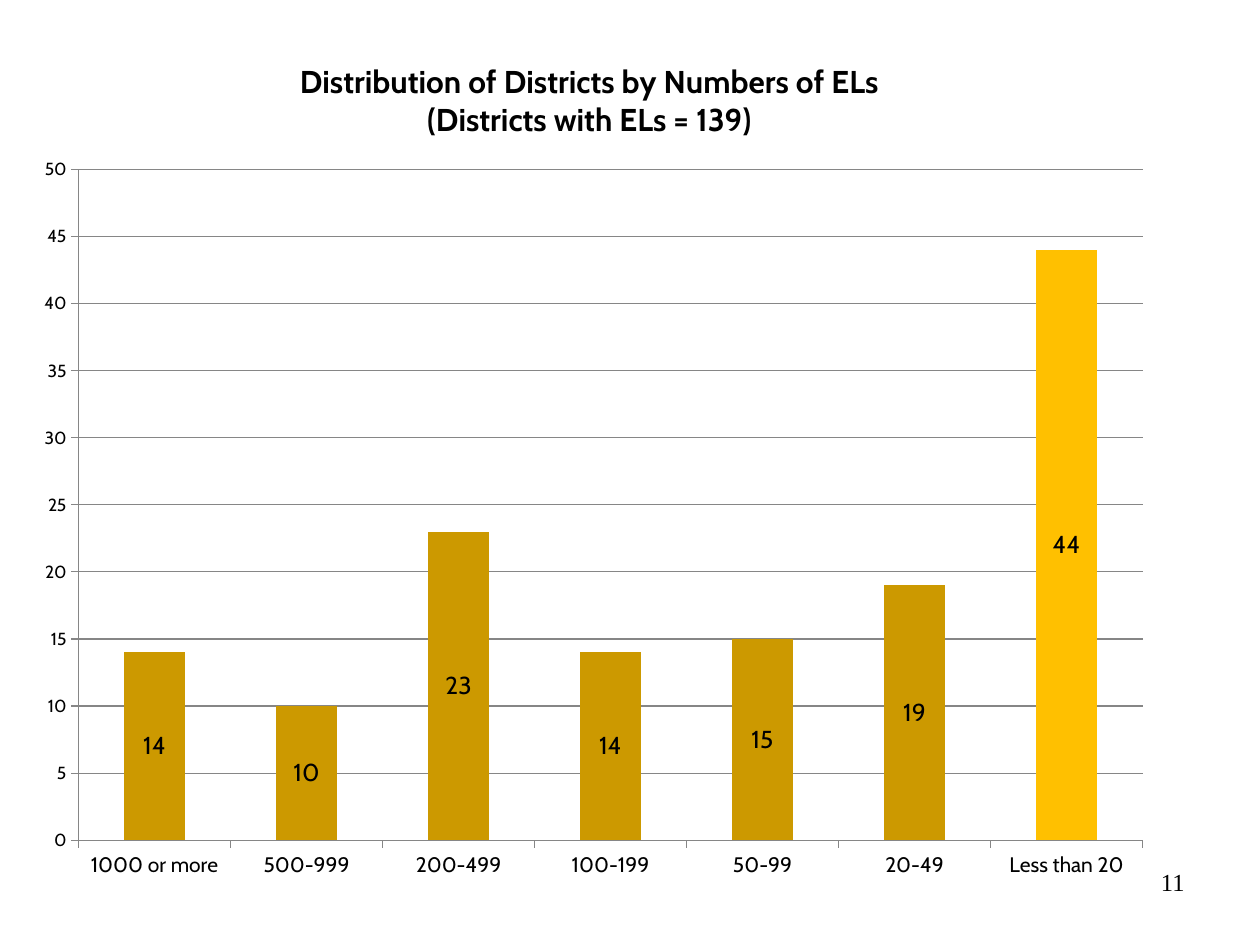
from dataclasses import dataclass

from lxml import etree
from pptx import Presentation
from pptx.chart.data import CategoryChartData
from pptx.dml.color import RGBColor
from pptx.enum.chart import XL_CHART_TYPE as ChartType
from pptx.enum.chart import XL_LABEL_POSITION as LabelPosition
from pptx.enum.chart import XL_TICK_MARK as TickMark
from pptx.enum.text import PP_ALIGN as Align
from pptx.oxml.ns import qn
from pptx.util import Inches, Pt


@dataclass(frozen=True)
class Theme:
    text: RGBColor = RGBColor(0, 0, 0)
    bar: RGBColor = RGBColor(0xCC, 0x99, 0x00)
    highlight: RGBColor = RGBColor(0xFF, 0xC0, 0x00)
    rule: RGBColor = RGBColor(0x86, 0x86, 0x86)
    chart_font: str = "Cabin"
    number_font: str = "Times New Roman"
    title_size: Pt = Pt(18)
    label_size: Pt = Pt(14)
    category_size: Pt = Pt(12)
    base_size: Pt = Pt(10)


THEME = Theme()
TITLE_LINES = [
    "Distribution of Districts by Numbers of ELs",
    "(Districts with ELs = 139)",
]
DISTRICTS = {
    "1000 or more": 14,
    "500-999": 10,
    "200-499": 23,
    "100-199": 14,
    "50-99": 15,
    "20-49": 19,
    "Less than 20": 44,
}


def format_font(font, **values):
    color = values.pop("color", THEME.text)
    for name, value in values.items():
        setattr(font, name, value)
    font.color.rgb = color


def place_part(part, index, **values):
    for old in part.findall(qn("c:layout")):
        part.remove(old)
    layout = etree.Element(qn("c:layout"))
    part.insert(index, layout)
    manual = etree.SubElement(layout, qn("c:manualLayout"))
    for name, value in values.items():
        etree.SubElement(manual, qn(f"c:{name}")).set("val", str(value))


def add_title(chart):
    title = chart.chart_title
    frame = title.text_frame
    frame.text = "\n".join(TITLE_LINES)
    for paragraph in frame.paragraphs:
        for run in paragraph.runs:
            format_font(run.font, name=THEME.chart_font,
                        size=THEME.title_size, bold=True)
    title.include_in_layout = False
    place_part(title._element, 1, xMode="edge", yMode="edge", x=0.24, y=0.03)


def format_axes(chart):
    categories, counts = chart.category_axis, chart.value_axis
    for axis, size in ((categories, THEME.category_size),
                       (counts, THEME.base_size)):
        axis.major_tick_mark = TickMark.OUTSIDE
        axis.minor_tick_mark = TickMark.NONE
        axis.format.line.color.rgb = THEME.rule
        format_font(axis.tick_labels.font, name=THEME.chart_font, size=size)
    scale = {"minimum_scale": 0, "maximum_scale": 50, "major_unit": 5,
             "has_major_gridlines": True}
    for name, value in scale.items():
        setattr(counts, name, value)
    counts.major_gridlines.format.line.color.rgb = THEME.rule


def format_bars(chart):
    plot = chart.plots[0]
    plot.gap_width = 150
    plot.vary_by_categories = False
    bars = plot.series[0]
    last_bar = bars.points[len(DISTRICTS) - 1]
    for target, color in ((bars, THEME.bar), (last_bar, THEME.highlight)):
        target.format.fill.solid()
        target.format.fill.fore_color.rgb = color
    labels = bars.data_labels
    labels.show_value = True
    labels.position = LabelPosition.CENTER
    format_font(labels.font, name=THEME.chart_font, size=THEME.label_size)


def add_district_chart(slide):
    data = CategoryChartData()
    data.categories = list(DISTRICTS)
    data.add_series("Series 1", list(DISTRICTS.values()))
    chart = slide.shapes.add_chart(
        ChartType.COLUMN_CLUSTERED, Inches(0.17), Inches(0.25),
        Inches(9.08), Inches(6.83), data).chart
    chart.has_legend = False
    format_font(chart.font, name=THEME.chart_font, size=THEME.base_size)
    add_title(chart)
    format_axes(chart)
    format_bars(chart)
    plot_area = chart._chartSpace.chart.plotArea
    place_part(plot_area, 0, layoutTarget="inner", xMode="edge",
               yMode="edge", x=0.05, y=0.16, w=0.93, h=0.78)


def add_page_number(slide, number):
    frame = slide.shapes.add_textbox(
        Inches(7.17), Inches(6.83), Inches(2.33), Inches(0.52)).text_frame
    frame.word_wrap = True
    paragraph = frame.paragraphs[0]
    paragraph.alignment = Align.RIGHT
    run = paragraph.add_run()
    run.text = number
    format_font(run.font, name=THEME.number_font, size=THEME.label_size)


def main():
    deck = Presentation()
    deck.slide_width, deck.slide_height = Inches(10), Inches(7.5)
    slide = deck.slides.add_slide(deck.slide_layouts[6])
    add_district_chart(slide)
    add_page_number(slide, "11")
    deck.save("out.pptx")


if __name__ == "__main__":
    main()
